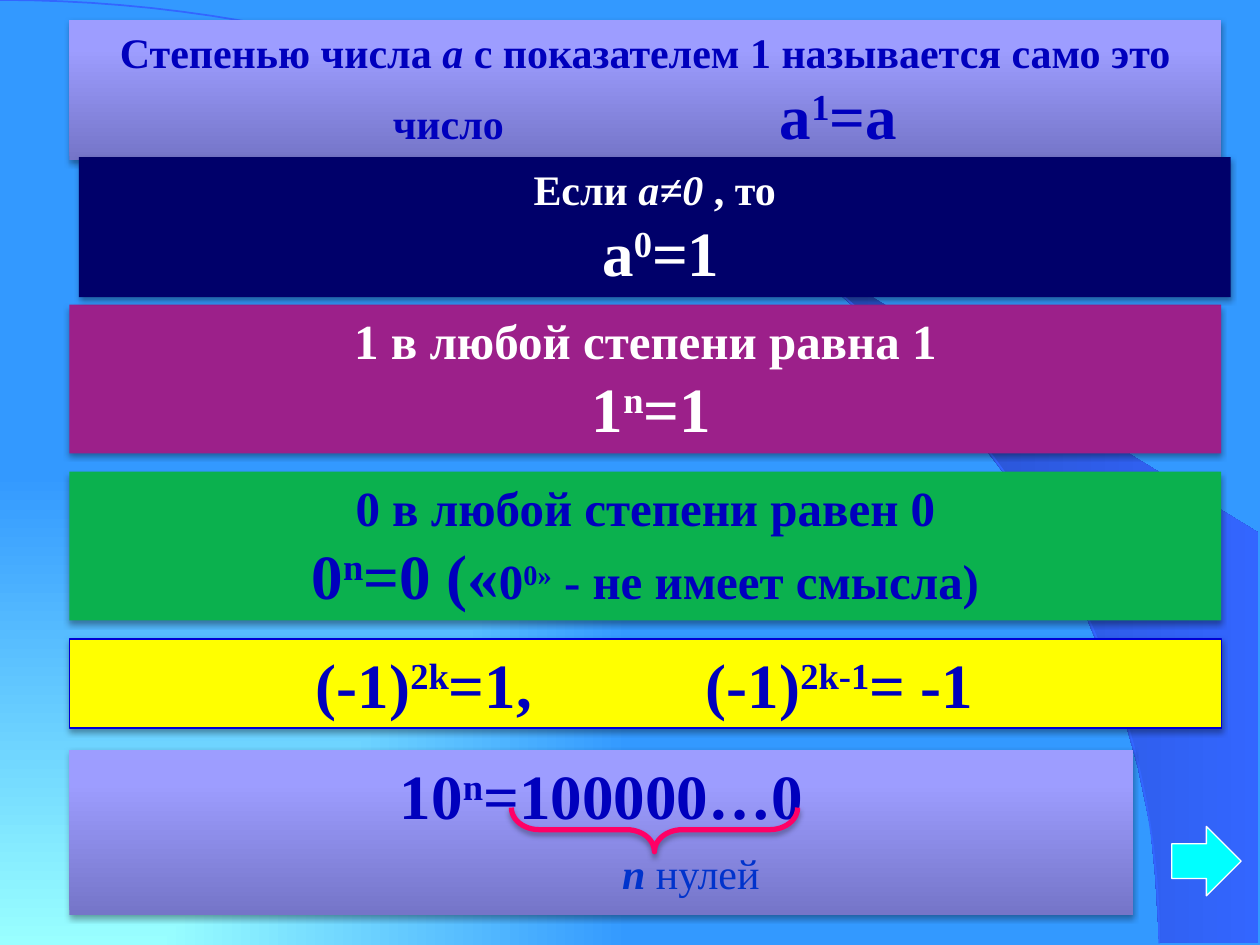
from math import cos, pi, sin

from lxml.etree import SubElement
from pptx import Presentation
from pptx.dml.color import RGBColor
from pptx.enum.shapes import MSO_SHAPE as Shape
from pptx.enum.text import MSO_ANCHOR as Anchor, PP_ALIGN as Align
from pptx.oxml.ns import qn
from pptx.util import Cm, Pt

BLUE, WHITE = "0000BD", "FFFFFF"
LEFT, WIDTH = 1.4, 23.22
VIOLET = [(0, "7575C8"), (80, "9D9DFF"), (100, "9F9FFF")]
WEDGE = [(23.37, 19), (25.37, 19.02), (25.37, 10.74), (14.96, 4.39),
         (15.85, 5.05), (16.59, 5.64), (17.4, 6.35), (18.19, 7.11),
         (19.35, 8.38), (20.4, 9.75), (21.13, 10.95), (21.79, 12.17),
         (22.3, 13.41), (22.68, 14.53), (22.94, 15.47), (23.19, 16.66),
         (23.29, 17.68), (23.37, 19)]


def color(hex_value):
    """Turn a hex string into a colour."""
    return RGBColor.from_string(hex_value)


def set_gradient(properties, stops, angle=None):
    """Swap the solid fill for a linear gradient, or one from the bottom left corner."""
    solid = properties.find(qn("a:solidFill"))
    gradient = properties.makeelement(qn("a:gradFill"), {"rotWithShape": "1"})
    properties.replace(solid, gradient)
    stop_list = SubElement(gradient, qn("a:gsLst"))
    for position, hex_value in stops:
        stop = SubElement(stop_list, qn("a:gs"), pos=str(position * 1000))
        SubElement(stop, qn("a:srgbClr"), val=hex_value)
    if angle is None:
        route = SubElement(gradient, qn("a:path"), path="rect")
        SubElement(route, qn("a:fillToRect"), t="100000", r="100000")
    else:
        SubElement(gradient, qn("a:lin"), ang=str(angle * 60000), scaled="0")


def style(shape, fill=None, line=None, line_width=0.75, angle=270):
    """Set fill, line and no shadow; a list of stops makes a gradient."""
    if fill is None:
        shape.fill.background()
    else:
        is_gradient = isinstance(fill, list)
        shape.fill.solid()
        shape.fill.fore_color.rgb = color(fill[0][1] if is_gradient else fill)
        if is_gradient:
            set_gradient(shape.element.spPr, fill, angle)
    if line is None:
        shape.line.fill.background()
    else:
        shape.line.color.rgb = color(line)
        shape.line.width = Pt(line_width)
    shape.shadow.inherit = False


def add_shadow(shape):
    """Add a soft shadow below the shape."""
    effects = shape.element.spPr.find(qn("a:effectLst"))
    shadow = SubElement(effects, qn("a:outerShdw"), blurRad="40000",
                        dist="23000", dir="5400000", rotWithShape="0")
    black = SubElement(shadow, qn("a:srgbClr"), val="000000")
    SubElement(black, qn("a:alpha"), val="35000")


def add_text(paragraph, text, size=36, hex_value=BLUE, bold=True, italic=False, raised=False):
    """Add one formatted run."""
    run = paragraph.add_run()
    run.text = text
    font = run.font
    font.name, font.size = "Times New Roman", Pt(size)
    font.bold, font.italic = bold, italic
    font.color.rgb = color(hex_value)
    if raised:
        font.fill  # the colour must exist before the attribute is set
        run._r.get_or_add_rPr().set("baseline", "30000")


def add_tabs(paragraph, stops):
    """Add left tab stops."""
    tabs = SubElement(paragraph._p.get_or_add_pPr(), qn("a:tabLst"))
    for stop in stops:
        SubElement(tabs, qn("a:tab"), pos=str(Cm(stop)), algn="l")


def fill_frame(frame, lines, hex_value=BLUE):
    """Write lines of runs; a line is its tab stops and its (text, format) pairs."""
    frame.word_wrap = True
    frame.vertical_anchor = Anchor.TOP
    for index, (stops, runs) in enumerate(lines):
        paragraph = frame.add_paragraph() if index else frame.paragraphs[0]
        paragraph.alignment = Align.LEFT if stops else Align.CENTER
        if stops:
            add_tabs(paragraph, stops)
        for text, options in runs:
            add_text(paragraph, text, **{"hex_value": hex_value, **options})


def add_rule(slide, top, height, fill, lines, left=LEFT, width=WIDTH, text_color=BLUE, line=None):
    """Add one shadowed panel with a rule about powers."""
    panel = slide.shapes.add_shape(Shape.RECTANGLE, Cm(left), Cm(top), Cm(width), Cm(height))
    style(panel, fill, line)
    add_shadow(panel)
    fill_frame(panel.text_frame, lines, text_color)


def add_outline(slide, points, closed):
    """Add a freeform through points given in centimetres."""
    pairs = [(Cm(x), Cm(y)) for x, y in points]
    builder = slide.shapes.build_freeform(*pairs[0])
    builder.add_line_segments(pairs[1:], close=closed)
    return builder.convert_to_shape()


def add_backdrop(slide):
    """Add the gradient background, the wedge and the arc."""
    slide.background.fill.solid()
    slide.background.fill.fore_color.rgb = color("3399FF")
    properties = slide.element.xpath(".//p:bgPr")[0]
    set_gradient(properties, [(0, "99FFFF"), (100, "3399FF")])
    style(add_outline(slide, WEDGE, True), [(0, "2449B6"), (100, "3366FF")], angle=0)
    angles = [step * pi / 120 for step in range(61)]
    arc = [(23.37 * sin(angle), 19.02 * (1 - cos(angle))) for angle in angles]
    style(add_outline(slide, arc, False), line="3366FF", line_width=1)


def add_zero_count(slide):
    """Add the brace under the zeros and its label."""
    brace = slide.shapes.add_shape(Shape.LEFT_BRACE, Cm(12.75), Cm(13.84), Cm(0.89), Cm(5.77))
    brace.rotation = 270
    brace.adjustments[0], brace.adjustments[1] = 0.63, 0.5
    style(brace, line="FF0066", line_width=3)
    add_shadow(brace)
    label = slide.shapes.add_textbox(Cm(12.29), Cm(16.97), Cm(3.96), Cm(1.27))
    small = {"size": 24, "hex_value": "0033CC"}
    fill_frame(label.text_frame, [
        ([], [("n ", {**small, "italic": True}), ("нулей", {**small, "bold": False})])])
    label.text_frame.paragraphs[0].alignment = Align.LEFT


def main():
    """Build the slide."""
    presentation = Presentation()
    presentation.slide_width, presentation.slide_height = Cm(25.4), Cm(19.05)
    slide = presentation.slides.add_slide(presentation.slide_layouts[6])
    add_backdrop(slide)
    big, raised = {}, {"raised": True}
    medium, small = {"size": 28}, {"size": 24}
    italic = {"size": 24, "italic": True}
    add_rule(slide, 0.4, 2.82, VIOLET, [
        ([], [("Степенью числа ", small), ("а", italic),
              (" с показателем 1 называется само это", small)]),
        ([6.27, 14.07], [("\tчисло\t", small), ("а", big), ("1", raised), ("=а", big)])])
    add_rule(slide, 6.14, 3, "9C208A", [
        ([], [("1 в любой степени равна 1", medium)]),
        ([], [(" ", medium), ("1", big), ("n", raised), ("=1", big)])], text_color=WHITE)
    add_rule(slide, 9.51, 3, "0BB14E", [
        ([], [("0 в любой степени равен 0", medium)]),
        ([], [("0", big), ("n", raised), ("=0 («", big), ("0", medium),
              ("0»", {**medium, **raised}), (" - не имеет смысла)", medium)])])
    add_rule(slide, 12.88, 1.8, "FFFF00", [
        ([4.72, 12.58], [("\t(-1)", big), ("2k", raised), ("=1,\t(-1)", big),
                         ("2k-1", raised), ("= -1", big)])], line="0000D4")
    add_rule(slide, 15.12, 3.33, VIOLET, [
        ([], [("10", big), ("n", raised), ("=100000…0", big)])], width=21.44)
    add_zero_count(slide)
    add_rule(slide, 3.17, 2.82, "00006A", [
        ([], [("Если ", small), ("а≠0", italic), (" , то", small)]),
        ([], [(" ", medium), ("а", big), ("0", raised), ("=1", big)])],
        left=1.59, text_color=WHITE)
    arrow = slide.shapes.add_shape(Shape.RIGHT_ARROW, Cm(23.62), Cm(16.66), Cm(1.4), Cm(1.4))
    style(arrow, "00FFFF", WHITE)
    presentation.save("out.pptx")


if __name__ == "__main__":
    main()
